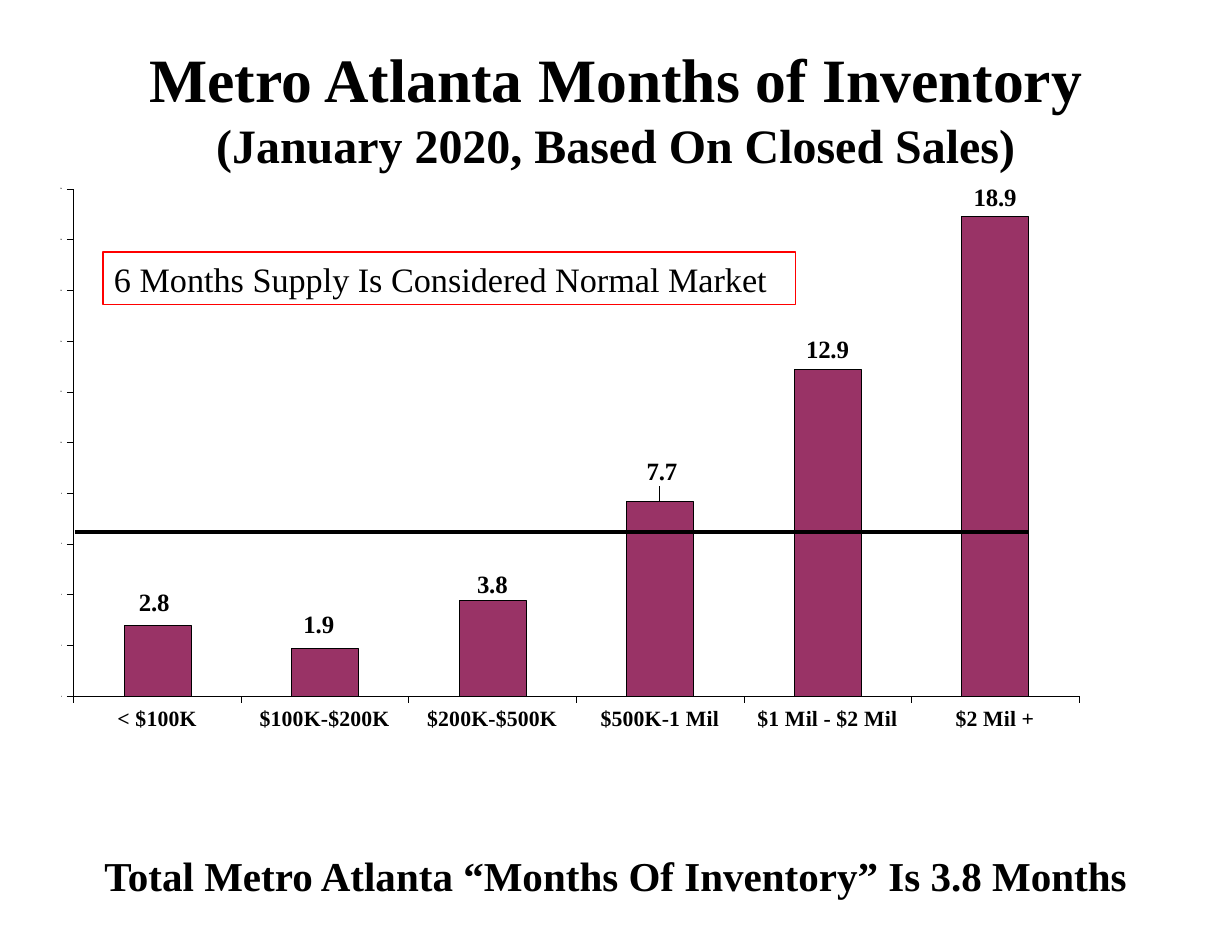
import pptx
import pptx.chart.data
import pptx.dml.color
import pptx.enum.chart
import pptx.enum.shapes
import pptx.enum.text
import pptx.oxml
import pptx.oxml.ns
import pptx.util

PX = 914400 / 112
FONT = "Times New Roman"
COLORS = {"ink": "000000", "bar": "993366", "frame": "FF0000"}
INVENTORY = {
    "< $100K": 2.8,
    "$100K-$200K": 1.9,
    "$200K-$500K": 3.8,
    "$500K-1 Mil": 7.7,
    "$1 Mil - $2 Mil": 12.9,
    "$2 Mil +": 18.9,
}
LABEL_SHIFTS = [(-3, -3), (-6, -4), (0, 4), (2, -10)]


def px(n):
    return pptx.util.Emu(round(n * PX))


def color(name):
    return pptx.dml.color.RGBColor.from_string(COLORS[name])


def manual_layout(x, y, w=None, h=None):
    parts = []
    if w is not None:
        parts += [("layoutTarget", "inner"), ("xMode", "edge"), ("yMode", "edge")]
    parts += [("x", x), ("y", y)]
    if w is not None:
        parts += [("w", w), ("h", h)]
    body = "".join(f'<c:{tag} val="{val}"/>' for tag, val in parts)
    return pptx.oxml.parse_xml(
        f'<c:layout {pptx.oxml.ns.nsdecls("c")}>'
        f"<c:manualLayout>{body}</c:manualLayout></c:layout>"
    )


class Deck:
    def __init__(self, width, height):
        self.prs = pptx.Presentation()
        self.prs.slide_width, self.prs.slide_height = px(width), px(height)
        self.slide = self.prs.slides.add_slide(self.prs.slide_layouts[6])

    def font(self, font, size, bold=True):
        font.name = FONT
        font.size = pptx.util.Pt(size)
        font.bold = bold
        font.color.rgb = color("ink")

    def line(self, line, name, width):
        line.color.rgb = color(name)
        line.width = pptx.util.Pt(width)

    def fill_text(self, sp, lines, align, anchor, bold=True):
        tf = sp.text_frame
        tf.word_wrap = True
        tf.vertical_anchor = anchor
        p = tf.paragraphs[0]
        p.alignment = align
        for i, (text, size) in enumerate(lines):
            if i:
                p.add_line_break()
            r = p.add_run()
            r.text = text
            self.font(r.font, size, bold)

    def heading(self, box, lines, anchor, top, bottom):
        sp = self.slide.shapes.add_textbox(*map(px, box))
        sp.text_frame.margin_top = px(top)
        sp.text_frame.margin_bottom = px(bottom)
        self.fill_text(sp, lines, pptx.enum.text.PP_ALIGN.CENTER, anchor)

    def framed_note(self, box, text, size):
        sp = self.slide.shapes.add_shape(
            pptx.enum.shapes.MSO_SHAPE.RECTANGLE, *map(px, box))
        sp.shadow.inherit = False
        sp.fill.background()
        self.line(sp.line, "frame", 0.75)
        self.fill_text(sp, [(text, size)], pptx.enum.text.PP_ALIGN.LEFT,
                       pptx.enum.text.MSO_ANCHOR.MIDDLE, bold=False)

    def rule(self, x1, y1, x2, y2, width):
        cn = self.slide.shapes.add_connector(
            pptx.enum.shapes.MSO_CONNECTOR.STRAIGHT, *map(px, (x1, y1, x2, y2)))
        self.line(cn.line, "ink", width)
        cn._element.spPr.append(
            pptx.oxml.parse_xml(f'<a:effectLst {pptx.oxml.ns.nsdecls("a")}/>'))

    def axis(self, axis, size):
        axis.has_major_gridlines = False
        axis.major_tick_mark = pptx.enum.chart.XL_TICK_MARK.OUTSIDE
        axis.minor_tick_mark = pptx.enum.chart.XL_TICK_MARK.NONE
        self.font(axis.tick_labels.font, size)
        self.line(axis.format.line, "ink", 0.02)

    def column_chart(self, box, values, plot_area, shifts):
        data = pptx.chart.data.CategoryChartData()
        data.categories = list(values)
        data.add_series("Series 1", list(values.values()))
        chart = self.slide.shapes.add_chart(
            pptx.enum.chart.XL_CHART_TYPE.COLUMN_CLUSTERED, *map(px, box), data).chart
        chart.has_title = False
        chart.has_legend = False
        self.font(chart.font, 1.2)

        area = chart._chartSpace.chart.plotArea
        for old in area.findall(pptx.oxml.ns.qn("c:layout")):
            area.remove(old)
        area.insert(0, manual_layout(*plot_area))

        self.axis(chart.category_axis, 14)
        chart.category_axis.tick_label_position = pptx.enum.chart.XL_TICK_LABEL_POSITION.LOW
        self.axis(chart.value_axis, 1.2)
        chart.value_axis.minimum_scale = 0
        chart.value_axis.maximum_scale = 20
        chart.value_axis.major_unit = 2

        plot = chart.plots[0]
        plot.gap_width = 150
        plot.vary_by_categories = False
        series = plot.series[0]
        series.format.fill.solid()
        series.format.fill.fore_color.rgb = color("bar")
        self.line(series.format.line, "ink", 0.06)

        labels = series.data_labels
        labels.show_value = True
        labels.position = pptx.enum.chart.XL_LABEL_POSITION.OUTSIDE_END
        self.font(labels.font, 16)
        for i, (dx, dy) in enumerate(shifts):
            label = series.points[i].data_label
            self.font(label.font, 16)
            label.position = pptx.enum.chart.XL_LABEL_POSITION.OUTSIDE_END
            idx = labels._element.findall(pptx.oxml.ns.qn("c:dLbl"))[i][0]
            idx.addnext(manual_layout(round(dx / box[2], 4), round(dy / box[3], 4)))

    def save(self):
        self.prs.save("out.pptx")


def main():
    deck = Deck(1232, 952)
    deck.column_chart((60, 165, 1112, 697), INVENTORY,
                      (0.01, 0.034, 0.906, 0.728), LABEL_SHIFTS)
    deck.rule(75, 532, 1029, 532, 2.25)
    deck.heading((0, 76, 1232, 52),
                 [("Metro Atlanta Months of Inventory", 39.6),
                  ("(January 2020, Based On Closed Sales)", 30.8)],
                 pptx.enum.text.MSO_ANCHOR.MIDDLE, 10, 0)
    deck.heading((0, 825, 1232, 72),
                 [("Total Metro Atlanta “Months Of Inventory” Is 3.8 Months", 26.4)],
                 pptx.enum.text.MSO_ANCHOR.TOP, 25, 0)
    deck.framed_note((103, 252, 693, 53),
                     "6 Months Supply Is Considered Normal Market", 22)
    deck.save()


if __name__ == "__main__":
    main()
